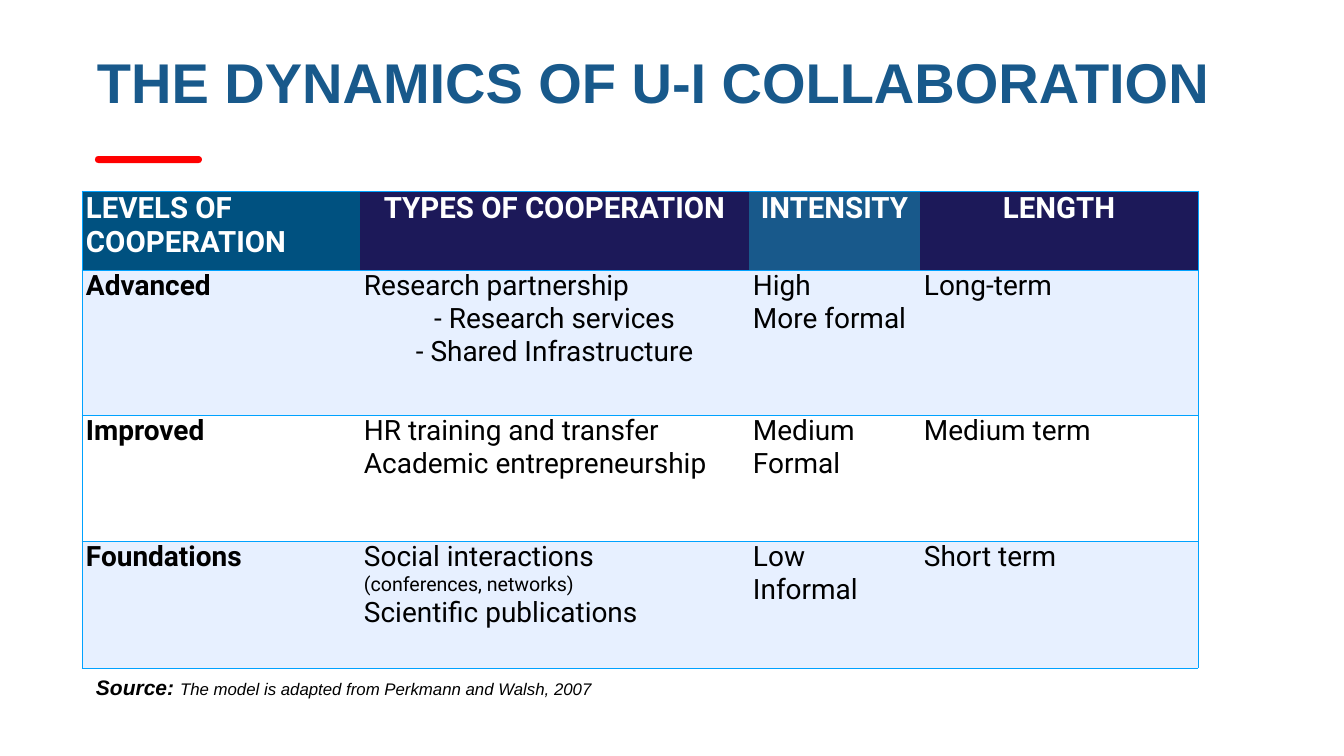
import pptx
import pptx.dml.color
import pptx.enum.shapes
import pptx.enum.text
import pptx.oxml.ns
import pptx.util
from lxml import etree

RGBColor = pptx.dml.color.RGBColor
ALIGN = pptx.enum.text.PP_ALIGN
ANCHOR = pptx.enum.text.MSO_ANCHOR

BLUE = RGBColor(0x18, 0x59, 0x8B)
TEAL = RGBColor(0x00, 0x51, 0x80)
NAVY = RGBColor(0x1C, 0x19, 0x59)
PALE = RGBColor(0xE7, 0xF0, 0xFF)
WHITE = RGBColor(0xFF, 0xFF, 0xFF)
BLACK = RGBColor(0x00, 0x00, 0x00)
RED = RGBColor(0xFF, 0x00, 0x00)
BORDER = RGBColor(0x00, 0xA2, 0xFF)

# Content
TITLE = "THE DYNAMICS OF U-I COLLABORATION"
SOURCE = [("Source: ", 30, True),
          ("The model is adapted from Perkmann and Walsh, 2007", 24, False)]
HEADERS = ["LEVELS OF COOPERATION", "TYPES OF COOPERATION", "INTENSITY", "LENGTH"]
LEVELS = [
    [["Advanced"],
     ["Research partnership", "- Research services", "- Shared Infrastructure"],
     ["High", "More formal"],
     ["Long-term"]],
    [["Improved"],
     ["HR training and transfer", "Academic entrepreneurship"],
     ["Medium", "Formal"],
     ["Medium term"]],
    [["Foundations"],
     ["Social interactions", "(conferences, networks)", "Scientific publications"],
     ["Low", "Informal"],
     ["Short term"]],
]
HEADER_FILLS = [TEAL, NAVY, BLUE, NAVY]
COLUMN_WIDTHS = [278, 389, 171, 278]
ROW_HEIGHTS = [79, 145, 126, 127]
TABLE_LEFT, TABLE_TOP = 82, 191


def px(length):
    return pptx.util.Emu(round(length * 914400 / 50.4))


def style(font, size, color, name, bold=False, italic=False):
    font.size = pptx.util.Pt(size)
    font.color.rgb = color
    font.name = name
    font.bold = bold
    font.italic = italic


def add_text_box(slide, left, top, width, height, inset_x, inset_y, anchor):
    frame = slide.shapes.add_textbox(px(left), px(top), px(width), px(height)).text_frame
    frame.word_wrap = True
    frame.vertical_anchor = anchor
    frame.margin_left = frame.margin_right = px(inset_x)
    frame.margin_top = frame.margin_bottom = px(inset_y)
    return frame


def set_borders(cell, visible_sides):
    properties = cell._tc.get_or_add_tcPr()
    for side in "LRTB":
        line = etree.SubElement(properties, pptx.oxml.ns.qn(f"a:ln{side}"), w="12700")
        if side in visible_sides:
            fill = etree.SubElement(line, pptx.oxml.ns.qn("a:solidFill"))
            etree.SubElement(fill, pptx.oxml.ns.qn("a:srgbClr"), val=str(BORDER))
        else:
            etree.SubElement(line, pptx.oxml.ns.qn("a:noFill"))


def fill_cell(cell, row, column, lines):
    is_header = row == 0
    last_column = len(HEADERS) - 1
    set_borders(cell, "TB" + "L" * (column == 0) + "R" * (column == last_column))
    cell.fill.solid()
    if is_header:
        cell.fill.fore_color.rgb = HEADER_FILLS[column]
    else:
        cell.fill.fore_color.rgb = PALE if row % 2 else WHITE
    cell.margin_left = cell.margin_right = px(4)
    cell.margin_top = cell.margin_bottom = 0
    cell.text = "\n".join(lines)
    for paragraph in cell.text_frame.paragraphs:
        centered = is_header and column > 0 or paragraph.text.startswith("-")
        paragraph.alignment = ALIGN.CENTER if centered else ALIGN.LEFT
        size = 42 if is_header else 28 if paragraph.text.startswith("(") else 40
        style(paragraph.font, size, WHITE if is_header else BLACK, "Roboto",
              bold=is_header or column == 0)


def main():
    presentation = pptx.Presentation()
    presentation.slide_width, presentation.slide_height = px(1344), px(756)
    slide = presentation.slides.add_slide(presentation.slide_layouts[6])

    # Title and red accent bar
    paragraph = add_text_box(slide, 93, 40, 1158, 126, 4, 8, ANCHOR.TOP).paragraphs[0]
    paragraph.text = TITLE
    style(paragraph.font, 80, BLUE, "Arial", bold=True)

    accent = slide.shapes.add_shape(pptx.enum.shapes.MSO_SHAPE.ROUNDED_RECTANGLE,
                                    px(95), px(156), px(107), px(7))
    accent.adjustments[0] = 0.5
    accent.shadow.inherit = False
    accent.fill.solid()
    accent.fill.fore_color.rgb = RED
    accent.line.fill.background()

    # Cooperation table
    rows = [[[header] for header in HEADERS]] + LEVELS
    table = slide.shapes.add_table(len(rows), len(HEADERS), px(TABLE_LEFT), px(TABLE_TOP),
                                   px(sum(COLUMN_WIDTHS)), px(sum(ROW_HEIGHTS))).table
    table.horz_banding = False
    for column, width in zip(table.columns, COLUMN_WIDTHS):
        column.width = px(width)
    for row, height in zip(table.rows, ROW_HEIGHTS):
        row.height = px(height)
    for row, cells in enumerate(rows):
        for column, lines in enumerate(cells):
            fill_cell(table.cell(row, column), row, column, lines)

    # Source line
    paragraph = add_text_box(slide, 93, 672, 1056, 31, 3, 3, ANCHOR.MIDDLE).paragraphs[0]
    for text, size, bold in SOURCE:
        run = paragraph.add_run()
        run.text = text
        style(run.font, size, BLACK, "Arial", bold=bold, italic=True)

    presentation.save("out.pptx")


if __name__ == "__main__":
    main()
